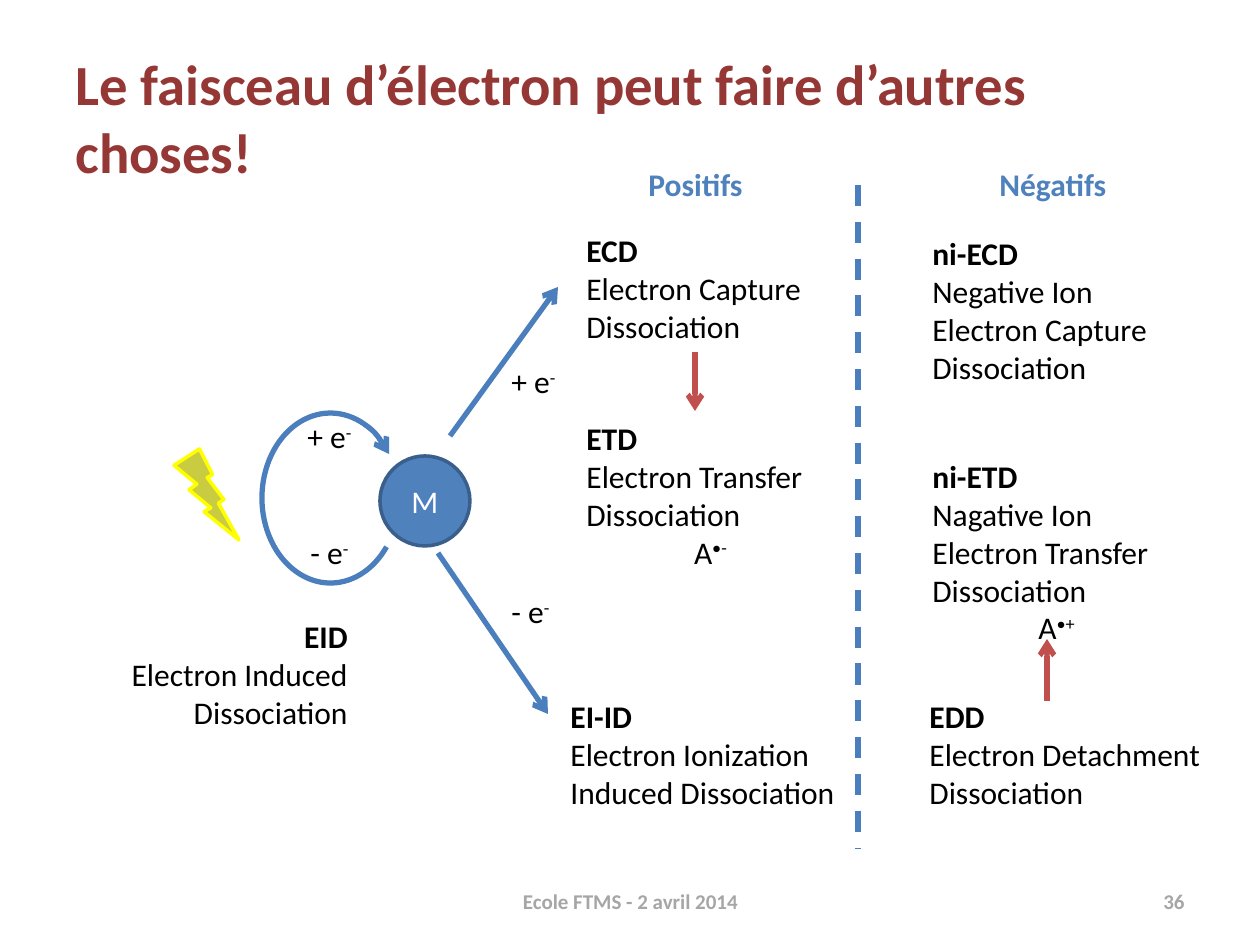
from pptx import Presentation
from pptx.dml.color import RGBColor
from pptx.enum.dml import MSO_LINE as Dash
from pptx.enum.shapes import MSO_CONNECTOR as Conn, MSO_SHAPE as Form
from pptx.enum.text import MSO_ANCHOR as Anchor, MSO_AUTO_SIZE as Fit
from pptx.enum.text import PP_ALIGN as Align
from pptx.oxml.xmlchemy import OxmlElement as Node
from pptx.util import Emu, Pt

FONT = "Calibri"
WINE = RGBColor(0x95, 0x37, 0x35)
GREY = RGBColor(0xA6, 0xA6, 0xA6)
BLUE = RGBColor(0x4F, 0x81, 0xBD)
STEEL = RGBColor(0x4B, 0x7E, 0xBC)
NAVY = RGBColor(0x3A, 0x5F, 0x8C)
RED = RGBColor(0xC0, 0x50, 0x4D)
OLIVE = RGBColor(0xC9, 0xCC, 0x40)
YELLOW = RGBColor(0xFF, 0xFF, 0x00)
BLACK = RGBColor(0, 0, 0)
WHITE = RGBColor(0xFF, 0xFF, 0xFF)


def px(n):
    return Emu(round(n * 914400 / 126))


def add_run(para, text, color=BLACK, size=18, bold=False, base=None):
    run = para.add_run()
    run.text = text
    font = run.font
    font.name, font.size, font.bold = FONT, Pt(size), bold
    font.color.rgb = color
    if base:
        run._r.get_or_add_rPr().set("baseline", str(base * 1000))


def add_text(slide, x, y, w, h, wrap=True, anchor=Anchor.TOP):
    box = slide.shapes.add_textbox(px(x), px(y), px(w), px(h))
    frame = box.text_frame
    frame.word_wrap = wrap
    frame.vertical_anchor = anchor
    if not wrap:
        frame.auto_size = Fit.SHAPE_TO_FIT_TEXT
    return frame


def add_label(slide, x, y, w, h, text, color, size, align=Align.LEFT):
    frame = add_text(slide, x, y, w, h, anchor=Anchor.MIDDLE)
    para = frame.paragraphs[0]
    para.alignment = align
    add_run(para, text, color, size, True)


def add_head(slide, x, y, w, text):
    frame = add_text(slide, x, y, w, 50, False)
    add_run(frame.paragraphs[0], text, BLUE, bold=True)


def add_charge(slide, x, y, sign):
    width = 71 if sign == "+" else 64
    frame = add_text(slide, x, y, width, 50, False)
    para = frame.paragraphs[0]
    add_run(para, sign + " e")
    add_run(para, "-", base=30)


def add_method(slide, x, y, w, h, short, full, ion=None, align=Align.LEFT):
    frame = add_text(slide, x, y, w, h)
    para = frame.paragraphs[0]
    para.alignment = align
    add_run(para, short, bold=True)
    para = frame.add_paragraph()
    para.alignment = align
    add_run(para, full)
    if ion:
        para = frame.add_paragraph()
        para.alignment = Align.CENTER
        add_run(para, "A")
        add_run(para, ion, base=30)


def add_tip(shape):
    tip = Node("a:tailEnd")
    tip.set("type", "arrow")
    shape.line._get_or_add_ln().append(tip)


def add_line(slide, x1, y1, x2, y2, color=STEEL, tip=True):
    line = slide.shapes.add_connector(
        Conn.STRAIGHT, px(x1), px(y1), px(x2), px(y2))
    line.line.color.rgb = color
    line.line.width = Pt(3)
    if tip:
        add_tip(line)
    else:
        line.line.dash_style = Dash.DASH
    line._element.spPr.append(Node("a:effectLst"))


def add_form(slide, form, x, y, w, h, fill, edge, width):
    shape = slide.shapes.add_shape(form, px(x), px(y), px(w), px(h))
    shape.shadow.inherit = False
    if fill is None:
        shape.fill.background()
    else:
        shape.fill.solid()
        shape.fill.fore_color.rgb = fill
    shape.line.color.rgb = edge
    shape.line.width = Pt(width)
    return shape


def add_cycle(slide, x, y):
    ball = add_form(slide, Form.OVAL, x + 305, y + 45, 90, 90, BLUE, NAVY, 2)
    frame = ball.text_frame
    frame.vertical_anchor = Anchor.MIDDLE
    para = frame.paragraphs[0]
    para.alignment = Align.CENTER
    add_run(para, "M", WHITE)
    loop = add_form(slide, Form.ARC, x + 187, y + 2, 137, 170, None, STEEL, 3)
    loop.adjustments[0] = 24.61
    loop.adjustments[1] = 193.86
    add_tip(loop)
    add_form(slide, Form.LIGHTNING_BOLT, x + 99, y + 38, 65, 91,
             OLIVE, YELLOW, 2)
    add_charge(slide, x + 220, y, "+")
    add_charge(slide, x + 223, y + 116, "-")
    add_method(slide, x, y + 200, 285, 127, "EID",
               "Electron Induced Dissociation", align=Align.RIGHT)


def add_paths(slide, x, y):
    add_line(slide, x + 12, y + 149, x + 120, y)
    add_charge(slide, x + 61, y + 69, "+")
    add_line(slide, x, y + 266, x + 110, y + 427)
    add_charge(slide, x + 61, y + 299, "-")


def add_plus(slide, x, y):
    add_head(slide, x + 78, y, 121, "Positifs")
    add_method(slide, x + 16, y + 66, 241, 127, "ECD",
               "Electron Capture Dissociation")
    add_line(slide, x + 137, y + 193, x + 137, y + 252, RED)
    add_method(slide, x + 16, y + 254, 273, 165, "ETD",
               "Electron Transfer Dissociation", "•-")
    add_method(slide, x, y + 532, 320, 127, "EI-ID",
               "Electron Ionization Induced Dissociation")


def add_minus(slide, x, y):
    add_head(slide, x + 70, y, 134, "Négatifs")
    add_method(slide, x + 3, y + 69, 241, 165, "ni-ECD",
               "Negative Ion Electron Capture Dissociation")
    add_method(slide, x + 3, y + 292, 273, 204, "ni-ETD",
               "Nagative Ion Electron Transfer Dissociation", "•+")
    add_line(slide, x + 130, y + 542, x + 130, y + 480, RED)
    add_method(slide, x, y + 532, 320, 127, "EDD",
               "Electron Detachment Dissociation")


def add_foot(slide, x, y):
    add_label(slide, x, y, 399, 50, "Ecole FTMS - 2 avril 2014",
              GREY, 12, Align.CENTER)
    add_label(slide, x + 472, y, 294, 50, "36", GREY, 12, Align.RIGHT)


def main():
    deck = Presentation()
    deck.slide_width, deck.slide_height = px(1260), px(945)
    slide = deck.slides.add_slide(deck.slide_layouts[6])
    add_label(slide, 63, 38, 1134, 157,
              "Le faisceau d’électron peut faire d’autres choses!", WINE, 32.4)
    add_foot(slide, 431, 876)
    add_cycle(slide, 75, 411)
    add_paths(slide, 438, 287)
    add_plus(slide, 558, 159)
    add_line(slide, 858, 185, 858, 849, tip=False)
    add_minus(slide, 917, 159)
    deck.save("out.pptx")


if __name__ == "__main__":
    main()
